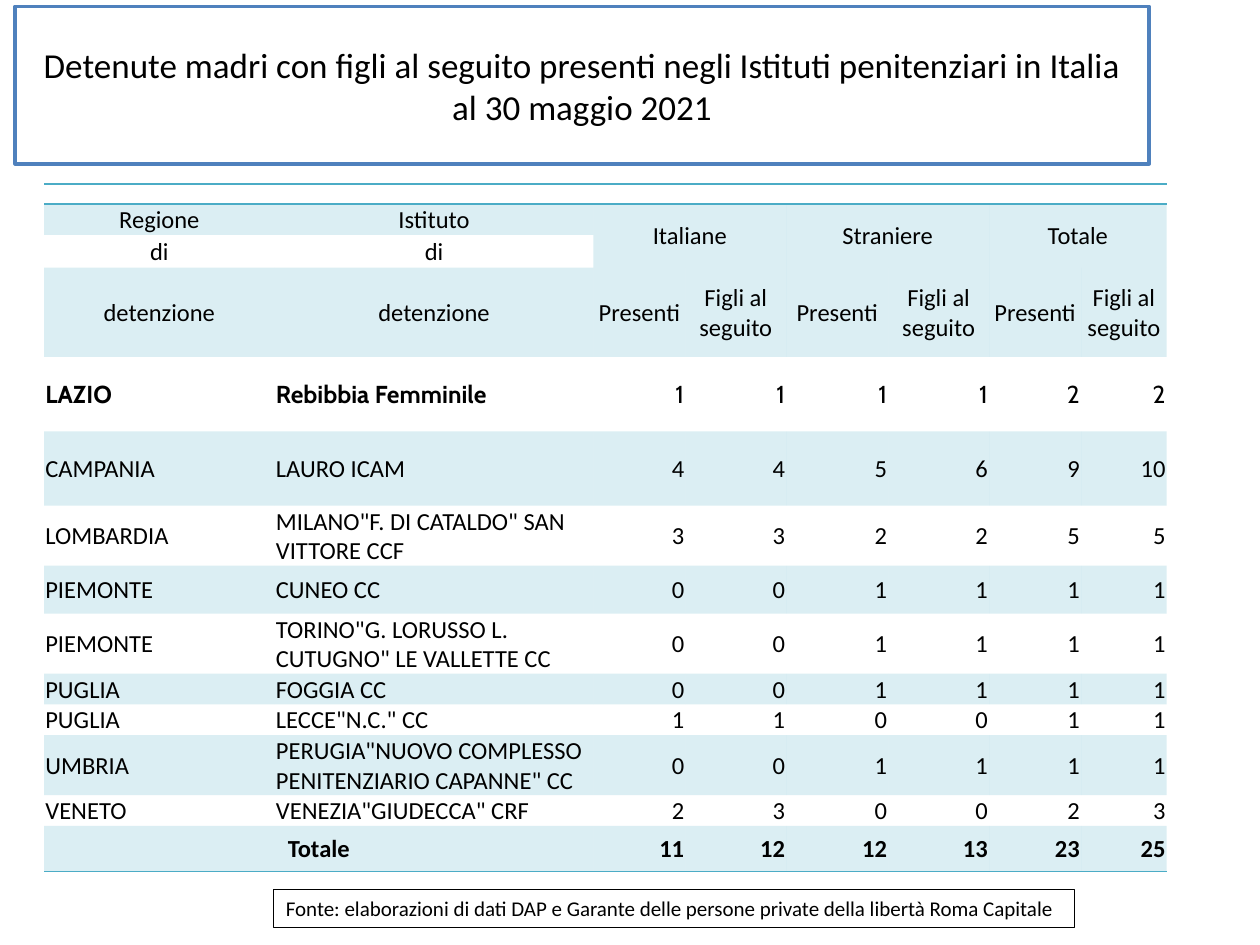
"""Build the slide on imprisoned mothers with children in Italian prisons."""
from lxml.etree import SubElement
from pptx import Presentation
from pptx.dml.color import RGBColor
from pptx.enum.text import MSO_ANCHOR, MSO_AUTO_SIZE, PP_ALIGN
from pptx.oxml import parse_xml
from pptx.oxml.ns import nsdecls, qn
from pptx.util import Inches, Pt

COLORS = {"text": "000000", "paper": "FFFFFF", "frame": "4F81BD", "accent": "4BACC6"}
NO_STYLE = "{2D5ABB26-0587-4C30-8999-92F81FD0307C}"
COLUMN_WIDTHS = [1.83, 2.53, 0.73, 0.8, 0.81, 0.8, 0.73, 0.68]
ROW_HEIGHTS = [0.16, 0.22, 0.26, 0.71, 0.59, 0.59, 0.43, 0.38, 0.44, 0.22, 0.22, 0.44, 0.22, 0.36]
HEADER_ROWS = 4
TOTAL_ROW = 13
PLAIN_ROWS = {0, 4, 6, 8, 10, 12}
ROWS = [
    [""] * 8,
    ["Regione", "Istituto", "Italiane", "", "Straniere", "", "Totale", ""],
    ["di", "di"] + [""] * 6,
    ["detenzione", "detenzione"] + ["Presenti", "Figli al seguito"] * 3,
    ["LAZIO", "Rebibbia Femminile", 1, 1, 1, 1, 2, 2],
    ["CAMPANIA", "LAURO ICAM", 4, 4, 5, 6, 9, 10],
    ["LOMBARDIA", 'MILANO"F. DI CATALDO" SAN VITTORE CCF', 3, 3, 2, 2, 5, 5],
    ["PIEMONTE", "CUNEO CC", 0, 0, 1, 1, 1, 1],
    ["PIEMONTE", 'TORINO"G. LORUSSO L. CUTUGNO" LE VALLETTE CC', 0, 0, 1, 1, 1, 1],
    ["PUGLIA", "FOGGIA CC", 0, 0, 1, 1, 1, 1],
    ["PUGLIA", 'LECCE"N.C." CC', 1, 1, 0, 0, 1, 1],
    ["UMBRIA", 'PERUGIA"NUOVO COMPLESSO PENITENZIARIO CAPANNE" CC', 0, 0, 1, 1, 1, 1],
    ["VENETO", 'VENEZIA"GIUDECCA" CRF', 2, 3, 0, 0, 2, 3],
    ["Totale", "", 11, 12, 12, 13, 23, 25],
]


def format_paragraph(para, size, align=PP_ALIGN.LEFT, name="Calibri", bold=False):
    para.alignment = align
    para.font.size = Pt(size)
    para.font.name = name
    para.font.bold = bold
    para.font.color.rgb = RGBColor.from_string(COLORS["text"])


def add_borders(cell, sides):
    for position, side in enumerate(sides):
        border = parse_xml(
            f'<a:ln{side} {nsdecls("a")} w="12700"><a:solidFill>'
            f'<a:srgbClr val="{COLORS["accent"]}"/></a:solidFill></a:ln{side}>')
        cell._tc.get_or_add_tcPr().insert(position, border)


deck = Presentation()
deck.slide_width, deck.slide_height = Inches(10), Inches(7.5)
page = deck.slides.add_slide(deck.slide_layouts[5])

title = page.shapes.title
title.left, title.top, title.width, title.height = Inches(0.12), Inches(0.05), Inches(9), Inches(1.25)
title.text_frame.text = ("Detenute madri con figli al seguito presenti negli "
                         "Istituti penitenziari in Italia\val 30 maggio 2021")
title.text_frame.vertical_anchor = MSO_ANCHOR.MIDDLE
title.text_frame.auto_size = MSO_AUTO_SIZE.NONE
format_paragraph(title.text_frame.paragraphs[0], 20, PP_ALIGN.CENTER)

source = page.shapes.add_textbox(Inches(2.17), Inches(7.06), Inches(6.36), Inches(0.3))
source.text_frame.text = ("Fonte: elaborazioni di dati DAP e Garante delle persone "
                          "private della libertà Roma Capitale")
source.text_frame.word_wrap = False
source.text_frame.auto_size = MSO_AUTO_SIZE.SHAPE_TO_FIT_TEXT
format_paragraph(source.text_frame.paragraphs[0], 12)

for box, color, width in [(title, "frame", 2), (source, "text", 0.75)]:
    box.fill.solid()
    box.fill.fore_color.rgb = RGBColor.from_string(COLORS["paper"])
    box.line.color.rgb = RGBColor.from_string(COLORS[color])
    box.line.width = Pt(width)

frame = page.shapes.add_table(len(ROWS), len(COLUMN_WIDTHS), Inches(0.35), Inches(1.46),
                              Inches(sum(COLUMN_WIDTHS)), Inches(sum(ROW_HEIGHTS)))
table = frame.table
table.first_row = table.horz_banding = False
table._tbl.tblPr.find(qn("a:tableStyleId")).text = NO_STYLE
for column, width in zip(table.columns, COLUMN_WIDTHS):
    column.width = Inches(width)
for row, height in zip(table.rows, ROW_HEIGHTS):
    row.height = Inches(height)

for r, values in enumerate(ROWS):
    for c, value in enumerate(values):
        cell = table.cell(r, c)
        cell.margin_left = cell.margin_right = cell.margin_top = Inches(0.01)
        cell.margin_bottom = 0
        cell.vertical_anchor = MSO_ANCHOR.MIDDLE
        if r in PLAIN_ROWS or (r == 2 and c < 2):
            cell.fill.background()
        else:
            cell.fill.solid()
            cell.fill.fore_color.rgb = RGBColor.from_string(COLORS["accent"])
            tint = cell._tc.tcPr.find(".//" + qn("a:srgbClr"))
            SubElement(tint, qn("a:alpha"), val="20000")
        if r == 0:
            add_borders(cell, "TB")
        elif r == TOTAL_ROW:
            add_borders(cell, "B")

        para = cell.text_frame.paragraphs[0]
        if value == "":
            SubElement(para._p, qn("a:endParaRPr"), sz="800")
            continue
        cell.text = str(value)
        if r < HEADER_ROWS or (r == TOTAL_ROW and c == 0):
            align = PP_ALIGN.CENTER
        else:
            align = PP_ALIGN.LEFT if c < 2 else PP_ALIGN.RIGHT
        is_lazio = values[0] == "LAZIO"
        format_paragraph(cell.text_frame.paragraphs[0], 14, align,
                         "Cabin" if is_lazio else "Calibri",
                         r == TOTAL_ROW or (is_lazio and c < 2))

table.cell(0, 0).merge(table.cell(0, 7))
table.cell(TOTAL_ROW, 0).merge(table.cell(TOTAL_ROW, 1))
for c in (2, 4, 6):
    table.cell(1, c).merge(table.cell(2, c + 1))

deck.save("out.pptx")
